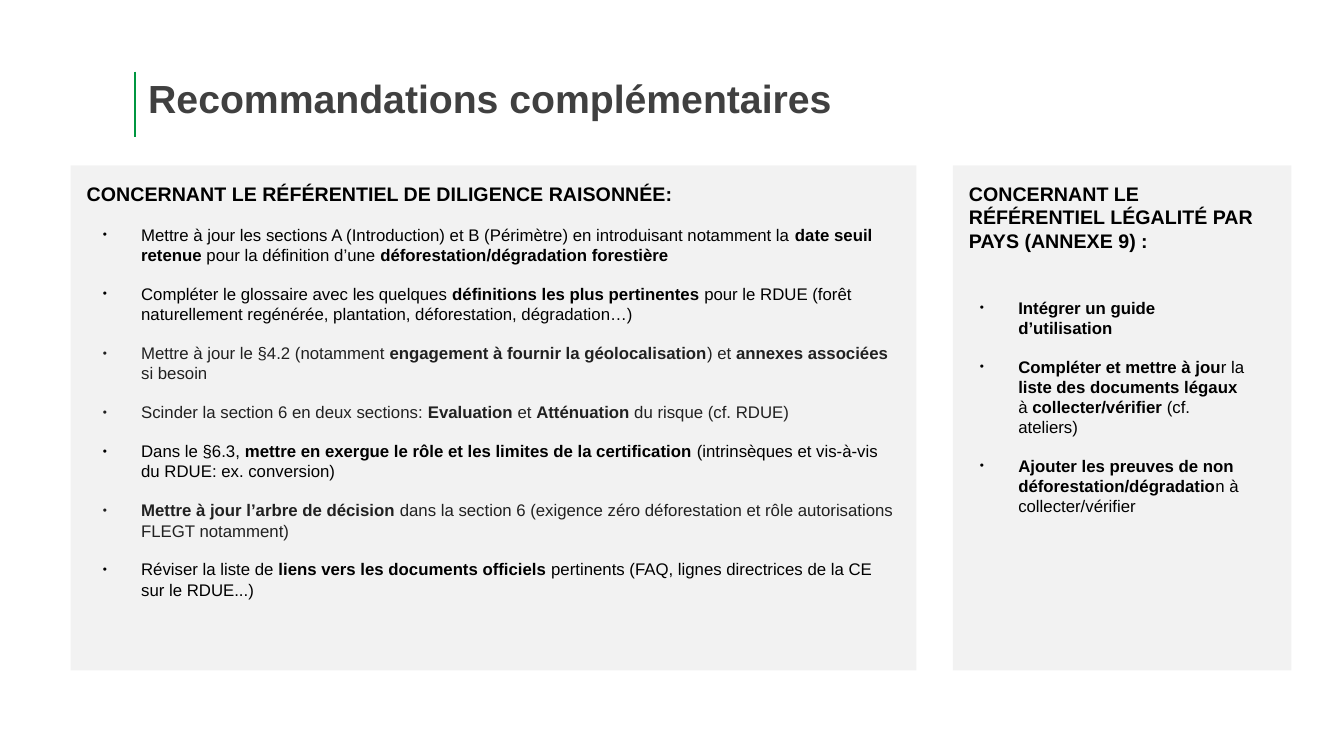
from lxml import etree
from pptx import Presentation
from pptx.dml.color import RGBColor
from pptx.enum import shapes, text
from pptx.oxml.ns import qn
from pptx.util import Inches, Pt

BLACK = RGBColor(0x00, 0x00, 0x00)
CHARCOAL = RGBColor(0x21, 0x21, 0x21)
TITLE_GREY = RGBColor(0x40, 0x40, 0x40)
GREEN = RGBColor(0x00, 0x96, 0x40)
FONT = "Arial"

# Bold passages stand between asterisks.
DILIGENCE = [
    (BLACK, "Mettre à jour les sections A (Introduction) et B (Périmètre) en introduisant notamment la "
            "*date seuil retenue* pour la définition d’une *déforestation/dégradation forestière*"),
    (BLACK, "Compléter le glossaire avec les quelques *définitions les plus pertinentes* pour le RDUE "
            "(forêt naturellement regénérée, plantation, déforestation, dégradation…)"),
    (CHARCOAL, "Mettre à jour le §4.2 (notamment *engagement à fournir la géolocalisation*) et "
               "*annexes associées *si besoin"),
    (CHARCOAL, "Scinder la section 6 en deux sections:* Evaluation *et *Atténuation* du risque (cf. RDUE)"),
    (BLACK, "Dans le §6.3, *mettre en exergue le rôle et les limites de la certification *"
            "(intrinsèques et vis-à-vis du RDUE: ex. conversion)"),
    (CHARCOAL, "*Mettre à jour l’arbre de décision *dans la section 6 (exigence zéro déforestation "
               "et rôle autorisations FLEGT notamment)"),
    (BLACK, "Réviser la liste de *liens vers les documents officiels *pertinents "
            "(FAQ, lignes directrices de la CE sur le RDUE...)"),
]
LEGALITY = [
    (BLACK, "*Intégrer un guide d’utilisation*"),
    (BLACK, "*Compléter et mettre à jou*r la *liste des documents légaux *à *collecter/vérifier *(cf. ateliers)"),
    (BLACK, "*Ajouter les preuves de non déforestation/dégradatio*n à collecter/vérifier"),
]

# heading, panel left, panel width, list box (left, top, width, height), items
COLUMNS = [
    ("CONCERNANT LE RÉFÉRENTIEL DE DILIGENCE RAISONNÉE:", 0.7, 8.39,
     (0.52, 2.23, 8.39, 5.01), DILIGENCE),
    ("CONCERNANT LE RÉFÉRENTIEL LÉGALITÉ PAR PAYS (ANNEXE 9) :", 9.45, 3.36,
     (9.22, 2.95, 3.13, 3.56), LEGALITY),
]


def set_frame(frame, margin, anchor=text.MSO_ANCHOR.TOP):
    """Wrap the text, with one margin on all four sides."""
    frame.word_wrap = True
    frame.vertical_anchor = anchor
    frame.margin_left = frame.margin_right = Inches(margin)
    frame.margin_top = frame.margin_bottom = Inches(margin)


def style_run(run, size, color, bold):
    run.font.name = FONT
    run.font.size = Pt(size)
    run.font.bold = bold
    run.font.color.rgb = color


prs = Presentation()
prs.slide_width, prs.slide_height = Inches(13.33), Inches(7.5)
slide = prs.slides.add_slide(prs.slide_layouts[6])

title_rule = slide.shapes.add_connector(
    shapes.MSO_CONNECTOR.STRAIGHT, Inches(1.34), Inches(0.71), Inches(1.34), Inches(1.36))
title_rule.line.color.rgb = GREEN
title_rule.line.width = Pt(2)
etree.SubElement(title_rule._element.spPr, qn("a:effectLst"))

title = slide.shapes.add_textbox(Inches(1.47), Inches(0.54), Inches(10.52), Inches(0.91)).text_frame
set_frame(title, 0, text.MSO_ANCHOR.MIDDLE)
title.text = "Recommandations complémentaires"
title.paragraphs[0].line_spacing = 0.9
style_run(title.paragraphs[0].runs[0], 28, TITLE_GREY, True)

for heading, left, width, list_box, items in COLUMNS:
    panel = slide.shapes.add_shape(
        shapes.MSO_SHAPE.RECTANGLE, Inches(left), Inches(1.64), Inches(width), Inches(5.01))
    panel.shadow.inherit = False
    panel.line.fill.background()
    panel.fill.solid()
    panel.fill.fore_color.rgb = BLACK
    tint = panel._element.spPr.find(qn("a:solidFill"))[0]
    etree.SubElement(tint, qn("a:alpha"), val="5000")
    set_frame(panel.text_frame, 0.16)
    panel.text_frame.text = heading
    panel.text_frame.paragraphs[0].alignment = text.PP_ALIGN.LEFT
    style_run(panel.text_frame.paragraphs[0].runs[0], 14, BLACK, True)

    advice = slide.shapes.add_textbox(*map(Inches, list_box)).text_frame
    set_frame(advice, 0)
    for number, (color, wording) in enumerate(items):
        item = advice.add_paragraph() if number else advice.paragraphs[0]
        item.level = 1
        item.space_after = Pt(13.4)
        properties = item._p.get_or_add_pPr()
        properties.set("marL", str(Inches(0.88)))
        properties.set("indent", str(Inches(-0.38)))
        etree.SubElement(properties, qn("a:buSzPct"), val="70000")
        etree.SubElement(properties, qn("a:buFont"), typeface=FONT)
        etree.SubElement(properties, qn("a:buChar"), char="•")
        for part, passage in enumerate(wording.split("*")):
            if passage:
                run = item.add_run()
                run.text = passage
                style_run(run, 12, color, part % 2 == 1)

prs.save("out.pptx")
